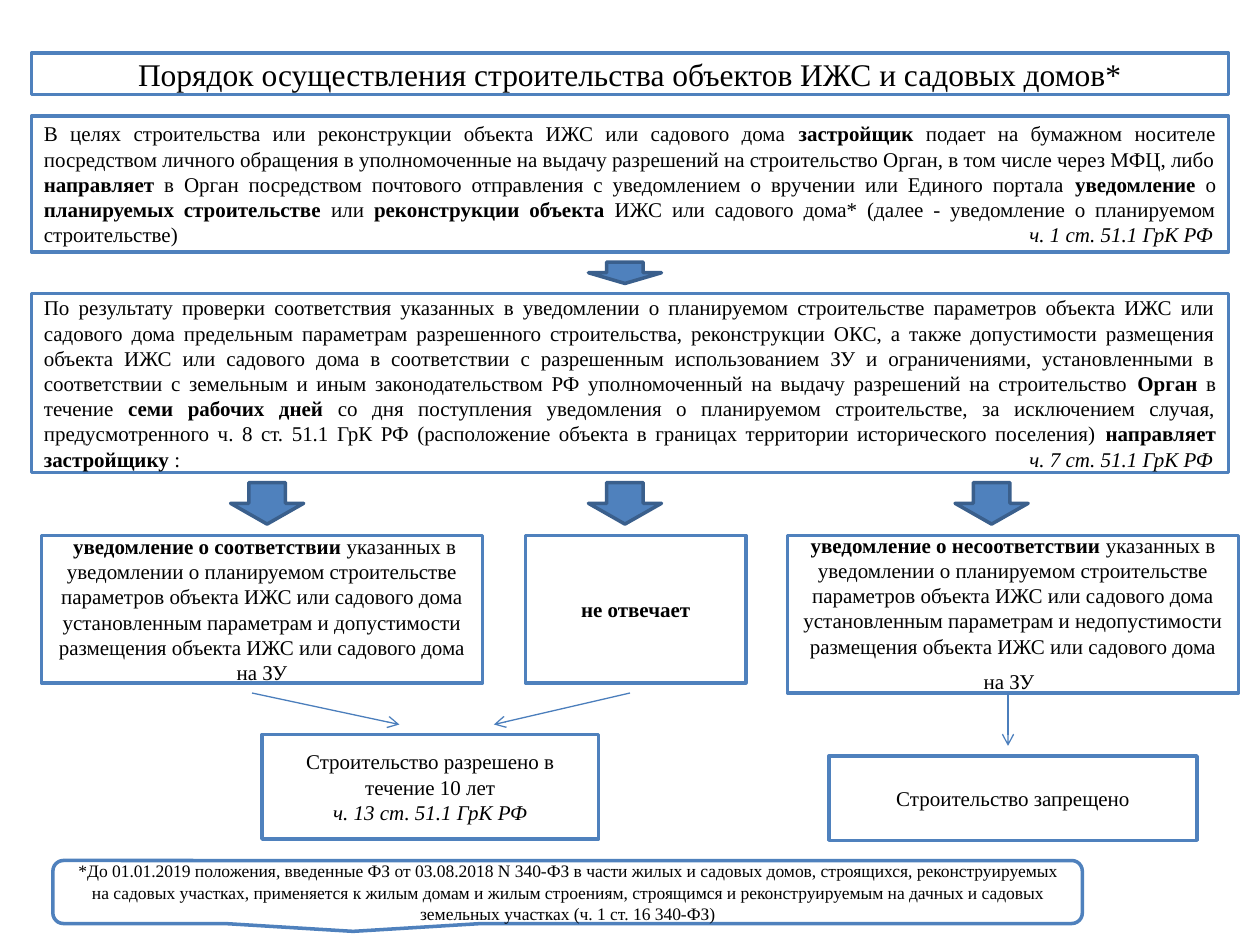
from dataclasses import dataclass

from lxml.etree import SubElement
from pptx import Presentation
from pptx.dml.color import RGBColor
from pptx.enum.shapes import MSO_CONNECTOR as Connector, MSO_SHAPE as Shape
from pptx.enum.text import MSO_ANCHOR as Anchor, MSO_AUTO_SIZE as AutoSize, PP_ALIGN as Align
from pptx.oxml.ns import qn
from pptx.util import Inches, Pt


@dataclass(frozen=True)
class Theme:
    font: str = "Times New Roman"
    text: RGBColor = RGBColor(0x00, 0x00, 0x00)
    paper: RGBColor = RGBColor(0xFF, 0xFF, 0xFF)
    accent: RGBColor = RGBColor(0x4F, 0x81, 0xBD)
    arrow_edge: RGBColor = RGBColor(0x3A, 0x5F, 0x8C)
    link: RGBColor = RGBColor(0x4B, 0x7E, 0xBC)
    title_size: float = 18
    body_size: float = 12
    note_size: float = 10
    border: float = 2
    link_width: float = 0.75


THEME = Theme()
BOLD, ITALIC = {"bold": True}, {"italic": True}
BIG = {"size": Pt(THEME.title_size)}

APPLICATION = [[
    ("В целях строительства или реконструкции объекта ИЖС или садового дома ", {}),
    ("застройщик", BOLD),
    (" подает на бумажном носителе посредством личного обращения в уполномоченные на выдачу "
     "разрешений на строительство Орган, в том числе через МФЦ, либо ", {}),
    ("направляет", BOLD),
    (" в Орган посредством почтового отправления с уведомлением о вручении или Единого портала ", {}),
    ("уведомление", BOLD),
    (" о ", {}),
    ("планируемых строительстве ", BOLD),
    ("или ", {}),
    ("реконструкции объекта", BOLD),
    (" ИЖС или садового дома* (далее - уведомление о планируемом строительстве)\t", {}),
    ("ч. 1 ст. 51.1 ГрК РФ", ITALIC),
]]
REVIEW = [[
    ("По результату проверки соответствия указанных в уведомлении о планируемом строительстве "
     "параметров объекта ИЖС или садового дома предельным параметрам разрешенного строительства, "
     "реконструкции ОКС, а также допустимости размещения объекта ИЖС или садового дома в "
     "соответствии с разрешенным использованием ЗУ и ограничениями, установленными в соответствии "
     "с земельным и иным законодательством РФ уполномоченный на выдачу разрешений на "
     "строительство ", {}),
    ("Орган", BOLD),
    (" в течение ", {}),
    ("семи рабочих дней ", BOLD),
    ("со дня поступления уведомления о планируемом строительстве, за исключением случая, "
     "предусмотренного ч. 8 ст. 51.1 ГрК РФ (расположение объекта в границах территории "
     "исторического поселения) ", {}),
    ("направляет застройщику ", BOLD),
    (":\t", {}),
    ("ч. 7 ст. 51.1 ГрК РФ", ITALIC),
]]
NOTE = ("*До 01.01.2019 положения, введенные ФЗ от 03.08.2018 N 340-ФЗ в части жилых и садовых "
        "домов, строящихся, реконструируемых на садовых участках, применяется к жилым домам и "
        "жилым строениям, строящимся и реконструируемым на дачных и садовых земельных участках "
        "(ч. 1 ст. 16 340-ФЗ)")


def notice(kind, verdict):
    """Paragraphs of a notice that differs only in its kind and verdict."""
    return [[
        (f"{kind} ", BOLD),
        ("указанных в уведомлении о планируемом строительстве параметров объекта ИЖС или садового "
         f"дома установленным параметрам и {verdict} размещения объекта ИЖС или садового дома "
         "на ЗУ", {}),
    ]]


def paint(shape, fill, edge):
    shape.fill.solid()
    shape.fill.fore_color.rgb = fill
    shape.line.color.rgb = edge
    shape.line.width = Pt(THEME.border)


def write(shape, paragraphs, size, align):
    frame = shape.text_frame
    for name, value in {"word_wrap": True, "auto_size": AutoSize.NONE,
                        "vertical_anchor": Anchor.MIDDLE}.items():
        setattr(frame, name, value)
    for index, runs in enumerate(paragraphs):
        paragraph = frame.add_paragraph() if index else frame.paragraphs[0]
        paragraph.alignment = align
        for text, style in runs:
            run = paragraph.add_run()
            run.text = text
            run.font.color.rgb = THEME.text
            for name, value in {"name": THEME.font, "size": Pt(size), **style}.items():
                setattr(run.font, name, value)


def add_title(slide, box, text):
    title = slide.shapes.title
    for name, length in zip(("left", "top", "width", "height"), box):
        setattr(title, name, Inches(length))
    paint(title, THEME.paper, THEME.accent)
    write(title, [[(text, {})]], THEME.title_size, Align.CENTER)


def add_panel(slide, box, paragraphs, size=THEME.body_size, align=Align.CENTER,
              kind=Shape.RECTANGLE):
    panel = slide.shapes.add_shape(kind, *map(Inches, box))
    panel.shadow.inherit = False
    paint(panel, THEME.paper, THEME.accent)
    write(panel, paragraphs, size, align)
    return panel


def add_step(slide, box, paragraphs):
    """Justified panel whose closing reference sits at a right tab stop."""
    panel = add_panel(slide, box, paragraphs, align=Align.JUSTIFY)
    for paragraph in panel.text_frame.paragraphs:
        properties = paragraph._p.get_or_add_pPr()
        stops = SubElement(properties, qn("a:tabLst"))
        SubElement(stops, qn("a:tab"), pos=str(Inches(box[2] - 0.22)), algn="r")


def add_down_arrow(slide, box):
    arrow = slide.shapes.add_shape(Shape.DOWN_ARROW, *map(Inches, box))
    arrow.shadow.inherit = False
    paint(arrow, THEME.accent, THEME.arrow_edge)


def add_link(slide, start, end):
    link = slide.shapes.add_connector(Connector.STRAIGHT, *map(Inches, start + end))
    link.line.color.rgb = THEME.link
    link.line.width = Pt(THEME.link_width)
    SubElement(link.line._get_or_add_ln(), qn("a:tailEnd"), type="arrow")
    SubElement(link._element.spPr, qn("a:effectLst"))


def add_answers(slide, top):
    """Three possible answers of the authority, each under its arrow."""
    for left in (1.83, 4.67, 7.58):
        add_down_arrow(slide, (left, top, 0.58, 0.33))
    row = top + 0.42
    approval = notice(" уведомление о соответствии", "допустимости")
    refusal = notice("уведомление о несоответствии", "недопустимости")
    refusal[0].append((" ", BIG))
    add_panel(slide, (0.33, row, 3.5, 1.17), approval)
    add_panel(slide, (4.17, row, 1.75, 1.17), [[("не отвечает", BOLD)]])
    add_panel(slide, (6.25, row, 3.58, 1.25), refusal)


def add_outcomes(slide, top):
    """Links from the answers to the two outcomes."""
    for start_x, end_x, drop in ((2, 3.17, 0.25), (5, 3.92, 0.25), (8, 8, 0.42)):
        add_link(slide, (start_x, top), (end_x, top + drop))
    add_panel(slide, (2.08, top + 0.33, 2.67, 0.83), [
        [("Строительство разрешено в течение 10 лет", {})],
        [("ч. 13 ст. 51.1 ГрК РФ", ITALIC)],
    ])
    add_panel(slide, (6.58, top + 0.5, 2.92, 0.67), [[("Строительство запрещено", {})]])


def main():
    deck = Presentation()
    deck.slide_width, deck.slide_height = Inches(10), Inches(7.5)
    slide = deck.slides.add_slide(deck.slide_layouts[5])
    add_title(slide, (0.25, 0.42, 9.5, 0.33),
              "Порядок осуществления строительства объектов ИЖС и садовых домов*")
    add_step(slide, (0.25, 0.92, 9.5, 1.08), APPLICATION)
    add_down_arrow(slide, (4.67, 2.08, 0.58, 0.17))
    add_step(slide, (0.25, 2.33, 9.5, 1.42), REVIEW)
    add_answers(slide, 3.83)
    add_outcomes(slide, 5.5)
    add_panel(slide, (0.42, 6.83, 8.17, 0.5), [[(NOTE, {})]], THEME.note_size,
              kind=Shape.ROUNDED_RECTANGULAR_CALLOUT)
    deck.save("out.pptx")


if __name__ == "__main__":
    main()
